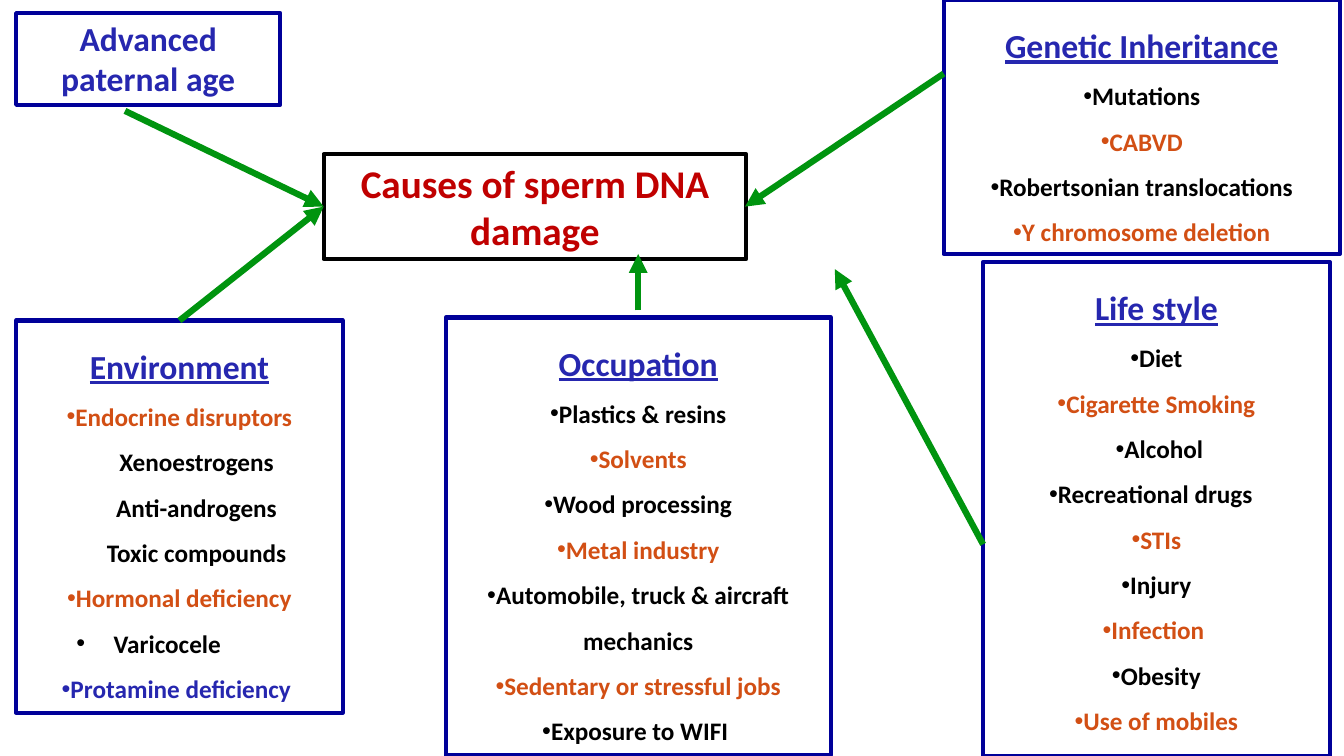
from dataclasses import dataclass

from lxml.etree import SubElement
from pptx import Presentation
from pptx.dml.color import RGBColor
from pptx.enum.shapes import MSO_CONNECTOR
from pptx.enum.text import MSO_AUTO_SIZE, PP_ALIGN
from pptx.oxml.ns import qn
from pptx.slide import Slide
from pptx.text.text import TextFrame
from pptx.util import Inches, Pt

BLACK = RGBColor(0x00, 0x00, 0x00)
RED = RGBColor(0xC0, 0x00, 0x00)
BLUE = RGBColor(0x26, 0x27, 0xAF)
NAVY = RGBColor(0x00, 0x00, 0x99)
ORANGE = RGBColor(0xD2, 0x4F, 0x14)
GREEN = RGBColor(0x00, 0x94, 0x0F)
FONT = "Calibri"


@dataclass(frozen=True)
class Cause:
    text: str
    color: RGBColor = BLACK
    bullet: bool = True
    left: float = 0  # margins and first-line indent in inches
    right: float = 0
    indent: float = 0
    align: PP_ALIGN = PP_ALIGN.CENTER


@dataclass(frozen=True)
class Box:
    at: tuple[float, float, float, float]
    title: str
    causes: tuple[Cause, ...] = ()
    size: int = 24
    color: RGBColor = BLUE
    border: RGBColor = NAVY


@dataclass(frozen=True)
class Arrow:
    start: tuple[float, float]
    end: tuple[float, float]


BOXES = (
    Box((3.21, 1.53, 4.19, 1.04), "Causes of sperm DNA damage",
        size=28, color=RED, border=BLACK),
    Box((0.16, 3.18, 3.24, 3.89), "Environment", (
        Cause("Endocrine disruptors", ORANGE),
        Cause("Xenoestrogens", bullet=False, left=0.34),
        Cause("Anti-androgens", bullet=False, left=0.34),
        Cause("Toxic compounds", bullet=False, left=0.34),
        Cause("Hormonal deficiency", ORANGE),
        Cause("Varicocele", left=0.87, indent=-0.37, align=PP_ALIGN.LEFT),
        Cause("Protamine deficiency", BLUE, right=0.06),
    )),
    Box((0.16, 0.13, 2.62, 0.91), "Advanced paternal age"),
    Box((9.36, 0, 3.93, 2.52), "Genetic Inheritance", (
        Cause("Mutations"),
        Cause("CABVD", ORANGE),
        Cause("Robertsonian translocations"),
        Cause("Y chromosome deletion", ORANGE),
    )),
    Box((4.42, 3.15, 3.82, 4.34), "Occupation", (
        Cause("Plastics & resins"),
        Cause("Solvents", ORANGE),
        Cause("Wood processing"),
        Cause("Metal industry", ORANGE),
        Cause("Automobile, truck & aircraft mechanics"),
        Cause("Sedentary or stressful jobs", ORANGE),
        Cause("Exposure to WIFI", right=0.06),
    )),
    Box((9.75, 2.6, 3.44, 4.9), "Life style", (
        Cause("Diet"),
        Cause("Cigarette Smoking", ORANGE),
        Cause("Alcohol", left=0.06),
        Cause("Recreational drugs", right=0.11),
        Cause("STIs", ORANGE),
        Cause("Injury"),
        Cause("Infection", ORANGE, right=0.06),
        Cause("Obesity"),
        Cause("Use of mobiles", ORANGE),
    )),
)

ARROWS = (
    Arrow((1.78, 3.18), (3.21, 2.05)),
    Arrow((1.24, 1.1), (3.21, 2.05)),
    Arrow((9.36, 0.73), (7.39, 2.05)),
    Arrow((9.75, 5.4), (8.28, 2.67)),
    Arrow((6.33, 3.08), (6.33, 2.52)),
)


def add_text(frame: TextFrame, text: str, *, size: int = 18,
             color: RGBColor = BLACK, underline: bool = False,
             spacing: float = 1.5, bullet: bool = False, left: float = 0,
             right: float = 0, indent: float = 0,
             align: PP_ALIGN = PP_ALIGN.CENTER) -> None:
    """Write into the empty first paragraph, or append a new one."""
    paragraph = frame.paragraphs[0] if not frame.text else frame.add_paragraph()
    paragraph.alignment = align
    paragraph.line_spacing = spacing
    properties = paragraph._p.get_or_add_pPr()
    for name, inches in (("marL", left), ("marR", right), ("indent", indent)):
        properties.set(name, str(int(Inches(inches))))
    if bullet:
        SubElement(properties, qn("a:buFont"), typeface="Arial")
        SubElement(properties, qn("a:buChar"), char="•")
    run = paragraph.add_run()
    run.text = text
    run.font.name = FONT
    run.font.size = Pt(size)
    run.font.bold = True
    run.font.underline = underline
    run.font.color.rgb = color


def draw_box(slide: Slide, box: Box) -> None:
    panel = slide.shapes.add_textbox(*(Inches(value) for value in box.at))
    panel.line.color.rgb = box.border
    panel.line.width = Pt(3)
    frame = panel.text_frame
    frame.word_wrap = True
    frame.auto_size = MSO_AUTO_SIZE.SHAPE_TO_FIT_TEXT
    listed = bool(box.causes)
    add_text(frame, box.title, size=box.size, color=box.color,
             underline=listed, spacing=1.5 if listed else 1.0)
    for cause in box.causes:
        add_text(frame, cause.text, color=cause.color, bullet=cause.bullet,
                 left=cause.left, right=cause.right, indent=cause.indent,
                 align=cause.align)


def draw_arrow(slide: Slide, arrow: Arrow) -> None:
    ends = (Inches(value) for value in arrow.start + arrow.end)
    link = slide.shapes.add_connector(MSO_CONNECTOR.STRAIGHT, *ends)
    link.line.color.rgb = GREEN
    link.line.width = Pt(4.5)
    SubElement(link.line._get_or_add_ln(), qn("a:tailEnd"), type="triangle")
    SubElement(link._element.spPr, qn("a:effectLst"))


def main() -> None:
    deck = Presentation()
    deck.slide_width, deck.slide_height = Inches(13.33), Inches(7.5)
    slide = deck.slides.add_slide(deck.slide_layouts[6])

    # Central topic and the groups of causes
    for box in BOXES:
        draw_box(slide, box)

    # Arrows towards the topic
    for arrow in ARROWS:
        draw_arrow(slide, arrow)

    deck.save("out.pptx")


if __name__ == "__main__":
    main()
